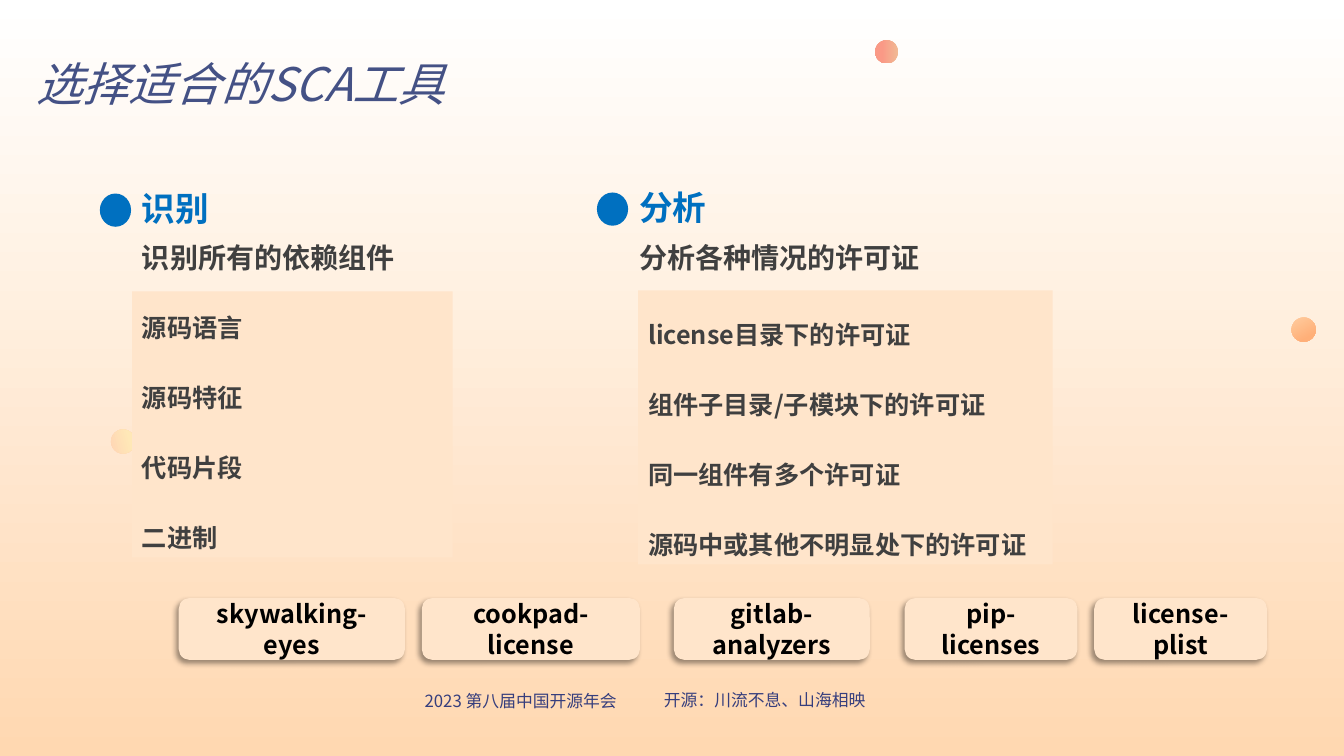
import dataclasses

import lxml.etree
import pptx
import pptx.dml.color
import pptx.enum.shapes
import pptx.enum.text
import pptx.oxml.ns
import pptx.util

Inches = pptx.util.Inches
Pt = pptx.util.Pt
SHAPE = pptx.enum.shapes.MSO_SHAPE
ALIGN = pptx.enum.text.PP_ALIGN
ANCHOR = pptx.enum.text.MSO_ANCHOR
qn = pptx.oxml.ns.qn


@dataclasses.dataclass(frozen=True)
class Theme:
    """Colours, font and type sizes of the slide."""
    font: str = "Noto Sans CJK SC"
    top: str = "FFFFFF"
    bottom: str = "FFD8B1"
    title: str = "445185"
    accent: str = "0070C0"
    body: str = "404040"
    panel: str = "FFE5CB"
    footer: str = "363E7D"
    black: str = "000000"
    title_size: int = 33
    heading_size: int = 24
    subtitle_size: int = 20
    body_size: int = 18
    footer_size: int = 12


THEME = Theme()


def rgb(value):
    """Return a colour from its hex digits."""
    return pptx.dml.color.RGBColor.from_string(value)


def fill_gradient(fill, start, end, position=1.0):
    """Fill from top to bottom with two colours."""
    fill.gradient()
    fill.gradient_angle = 270
    for stop, color, pos in zip(fill.gradient_stops, (start, end), (0, position)):
        stop.color.rgb = rgb(color)
        stop.position = pos


def write(sp, lines, size, color, anchor=ANCHOR.TOP, para=None, gap=0, **font):
    """Write one paragraph per line into a shape."""
    tf = sp.text_frame
    for name, value in {"word_wrap": True, "vertical_anchor": anchor,
                        "auto_size": pptx.enum.text.MSO_AUTO_SIZE.NONE}.items():
        setattr(tf, name, value)
    for i, line in enumerate(lines):
        p = tf.add_paragraph() if i else tf.paragraphs[0]
        for name, value in {"alignment": ALIGN.LEFT, **(para or {})}.items():
            setattr(p, name, value)
        if i and gap:
            p.space_before = Pt(gap)
        r = p.add_run()
        r.text = line
        for name, value in {"name": THEME.font, "size": Pt(size), **font}.items():
            setattr(r.font, name, value)
        r.font.color.rgb = rgb(color)
        ea = lxml.etree.SubElement(r._r.get_or_add_rPr(), qn("a:ea"))
        ea.set("typeface", THEME.font)


def add_text(s, box, lines, size, color, **style):
    """Add a text box in the given box."""
    sp = s.shapes.add_textbox(*map(Inches, box))
    write(sp, lines, size, color, **style)


def add_block(s, kind, box, color=None):
    """Add a shape without outline or shadow."""
    sp = s.shapes.add_shape(kind, *map(Inches, box))
    sp.shadow.inherit = False
    sp.line.fill.background()
    if color:
        sp.fill.solid()
        sp.fill.fore_color.rgb = rgb(color)
    return sp


def add_backdrop(s):
    """Draw the gradient background and its floating dots."""
    fill_gradient(s.background.fill, THEME.top, THEME.bottom)
    dots = [(12.81, 3.15, 0.24, 331, "FFD3A7", "FFAF78"),
            (8.68, 0.4, 0.23, 90, "F1B994", "FA9986"),
            (1.1, 4.26, 0.24, 255, "FFD3B4", "FFE8B7")]
    for x, y, size, rotation, start, end in dots:
        sp = add_block(s, SHAPE.OVAL, (x, y, size, size))
        sp.rotation = rotation
        fill_gradient(sp.fill, start, end, 0.71)


def add_title(s, box, text):
    """Place the title placeholder and write it."""
    sp = s.shapes.title
    for name, value in zip(("left", "top", "width", "height"), box):
        setattr(sp, name, Inches(value))
    write(sp, [text], THEME.title_size, THEME.title, ANCHOR.MIDDLE,
          {"line_spacing": 0.9}, italic=True)


def add_topic(s, box, heading, subtitle, panel, items):
    """Draw a bulleted heading, its subtitle and a panel of items."""
    x, y, w, h = box
    leading = {"line_spacing": Pt(25)}
    sp = add_block(s, SHAPE.RECTANGLE, panel, THEME.panel)
    write(sp, items, THEME.body_size, THEME.body, ANCHOR.BOTTOM, leading,
          gap=25, bold=True)
    add_block(s, SHAPE.OVAL, (x, y + 0.1, 0.31, 0.33), THEME.accent)
    add_text(s, (x + 0.32, y, w - 0.32, 0.5), [heading],
             THEME.heading_size, THEME.accent, bold=True)
    add_text(s, (x + 0.32, y + h - 0.6, w - 0.32, 0.6), [subtitle],
             THEME.subtitle_size, THEME.body, anchor=ANCHOR.BOTTOM,
             para=leading, bold=True)


def add_shadow(sp):
    """Cast a soft shadow to the lower left."""
    effects = sp._element.spPr.find(qn("a:effectLst"))
    shadow = lxml.etree.SubElement(effects, qn("a:outerShdw"))
    for name, value in {"blurRad": Pt(4), "dist": Pt(3), "dir": 135 * 60000,
                        "algn": "tr", "rotWithShape": 0}.items():
        shadow.set(name, str(value))
    color = lxml.etree.SubElement(shadow, qn("a:srgbClr"), val=THEME.black)
    lxml.etree.SubElement(color, qn("a:alpha"), val="40000")


def add_tools(s, top, height, tools):
    """Draw a row of tool buttons."""
    for name, x, w in tools:
        sp = add_block(s, SHAPE.ROUNDED_RECTANGLE, (x, top, w, height), THEME.panel)
        sp.line.color.rgb = rgb(THEME.panel)
        sp.line.width = Pt(1)
        add_shadow(sp)
        write(sp, [name], THEME.body_size, THEME.black, ANCHOR.MIDDLE,
              {"alignment": ALIGN.CENTER}, bold=True)


def add_footer(s):
    """Write the conference name and its motto."""
    for text, box in [("2023 第八届中国开源年会", (3.79, 6.8, 2.75, 0.3)),
                      ("开源：川流不息、山海相映", (6.38, 6.79, 2.41, 0.3))]:
        add_text(s, box, [text], THEME.footer_size, THEME.footer,
                 para={"alignment": ALIGN.CENTER})


def main():
    """Build the slide and save it."""
    prs = pptx.Presentation()
    prs.slide_width, prs.slide_height = Inches(13.33), Inches(7.5)
    s = prs.slides.add_slide(prs.slide_layouts[5])
    add_backdrop(s)
    add_footer(s)
    add_title(s, (0.26, 0.32, 4.8, 1.07), "选择适合的SCA工具")
    add_topic(s, (0.99, 1.82, 3.73, 0.95), "识别", "识别所有的依赖组件",
              (1.31, 2.89, 3.18, 2.64),
              ["源码语言", "源码特征", "代码片段", "二进制"])
    add_topic(s, (5.92, 1.81, 4.76, 0.96), "分析", "分析各种情况的许可证",
              (6.33, 2.88, 4.11, 2.72),
              ["license目录下的许可证", "组件子目录/子模块下的许可证",
               "同一组件有多个许可证", "源码中或其他不明显处下的许可证"])
    add_tools(s, 5.94, 0.6, [("skywalking-eyes", 1.78, 2.23),
                             ("cookpad-license", 4.19, 2.15),
                             ("gitlab-analyzers", 6.69, 1.93),
                             ("pip-licenses", 8.98, 1.7),
                             ("license-plist", 10.86, 1.7)])
    prs.save("out.pptx")


if __name__ == "__main__":
    main()
